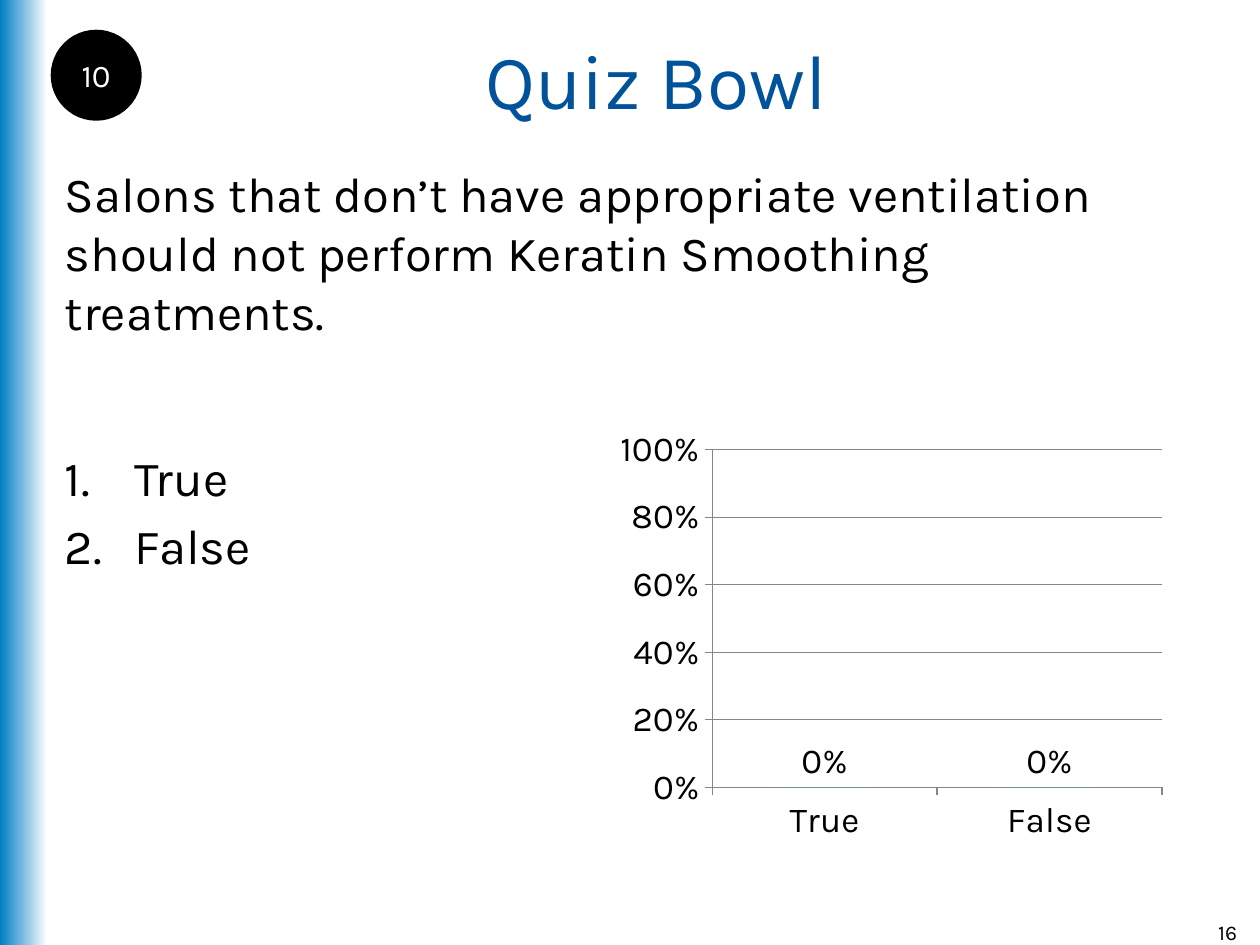
"""Build a quiz slide with a question, two numbered answers and a response chart."""
import pptx
import pptx.chart.data
import pptx.dml.color
import pptx.enum.chart
import pptx.enum.shapes
import pptx.enum.text
import pptx.util
from lxml import etree

Pt = pptx.util.Pt
Align = pptx.enum.text.PP_ALIGN
Anchor = pptx.enum.text.MSO_ANCHOR
Shape = pptx.enum.shapes.MSO_SHAPE
FONT = "Karla"
COLORS = {
    "band": "007DC3",
    "title": "00539B",
    "black": "000000",
    "white": "FFFFFF",
    "bar": "00CC99",
    "grid": "868686",
}


def rgb(name):
    return pptx.dml.color.RGBColor.from_string(COLORS[name])


def write(box, lines, size, color="black", align=Align.LEFT, anchor=Anchor.TOP, numbered=False):
    frame = box.text_frame
    frame.word_wrap = True
    frame.vertical_anchor = anchor
    frame.text = "\n".join(lines)
    for index, para in enumerate(frame.paragraphs):
        para.alignment = align
        para.space_before = Pt(size * 0.2 if index else 0)
        if numbered:
            properties = para._p.get_or_add_pPr()
            properties.set("marL", str(Pt(40)))
            properties.set("indent", str(Pt(-40)))
            bullet = etree.SubElement(properties, pptx.oxml.ns.qn("a:buAutoNum"))
            bullet.set("type", "arabicPeriod")
        for span in para.runs:
            span.font.name = FONT
            span.font.size = Pt(size)
            span.font.color.rgb = rgb(color)


deck = pptx.Presentation()
deck.slide_width, deck.slide_height = Pt(720), Pt(540)
page = deck.slides.add_slide(deck.slide_layouts[6])
shapes = page.shapes
answers = ["True", "False"]

band = shapes.add_shape(Shape.RECTANGLE, 0, 0, Pt(27), Pt(540))
band.shadow.inherit = False
band.line.fill.background()
band.fill.gradient()
band.fill.gradient_angle = 0
for stop, color, position in zip(band.fill.gradient_stops, ("band", "white"), (0, 1)):
    stop.color.rgb = rgb(color)
    stop.position = position

title = shapes.add_textbox(Pt(30), 0, Pt(690), Pt(90))
write(title, ["Quiz Bowl"], 44, "title", Align.CENTER, Anchor.MIDDLE)

page_number = shapes.add_textbox(Pt(678), Pt(522), Pt(36), Pt(18))
write(page_number, ["16"], 12, align=Align.RIGHT)

question = shapes.add_textbox(Pt(30), Pt(90), Pt(660), Pt(54))
write(question, ["Salons that don’t have appropriate ventilation should not perform "
                 "Keratin Smoothing treatments."], 28)

answer_list = shapes.add_textbox(Pt(30), Pt(252), Pt(322.5), Pt(228))
write(answer_list, answers, 28, numbered=True)

data = pptx.chart.data.CategoryChartData(number_format="0%")
data.categories = answers
data.add_series("Series 1", [0, 0])
chart = shapes.add_chart(pptx.enum.chart.XL_CHART_TYPE.COLUMN_CLUSTERED,
                         Pt(348), Pt(240), Pt(322.5), Pt(246), data).chart
chart.has_legend = False
chart.has_title = False
chart.font.name = FONT
chart.font.size = Pt(20)
chart.font.color.rgb = rgb("black")

plot = chart.plots[0]
plot.vary_by_categories = False
plot.gap_width = 150
plot.series[0].format.fill.solid()
plot.series[0].format.fill.fore_color.rgb = rgb("bar")
plot.has_data_labels = True
labels = plot.data_labels
labels.show_value = True
labels.number_format = "0%"
labels.number_format_is_linked = False
labels.position = pptx.enum.chart.XL_LABEL_POSITION.OUTSIDE_END

value_axis = chart.value_axis
value_axis.minimum_scale, value_axis.maximum_scale = 0, 1
value_axis.major_unit = 0.2
value_axis.tick_labels.number_format = "0%"
value_axis.tick_labels.number_format_is_linked = False
value_axis.has_major_gridlines = True
for axis in (value_axis, chart.category_axis):
    axis.major_tick_mark = pptx.enum.chart.XL_TICK_MARK.OUTSIDE
    axis.minor_tick_mark = pptx.enum.chart.XL_TICK_MARK.NONE
for ruled in (value_axis, chart.category_axis, value_axis.major_gridlines):
    ruled.format.line.color.rgb = rgb("grid")
    ruled.format.line.width = Pt(0.75)

countdown = shapes.add_shape(Shape.OVAL, Pt(30), Pt(18), Pt(50), Pt(50))
countdown.shadow.inherit = False
countdown.fill.solid()
countdown.fill.fore_color.rgb = rgb("black")
countdown.line.color.rgb = rgb("black")
countdown.line.width = Pt(2)
write(countdown, ["10"], 18, "white", Align.CENTER, Anchor.MIDDLE)
frame = countdown.text_frame
frame.word_wrap = False
frame.margin_left = frame.margin_right = frame.margin_top = frame.margin_bottom = 0

deck.save("out.pptx")
